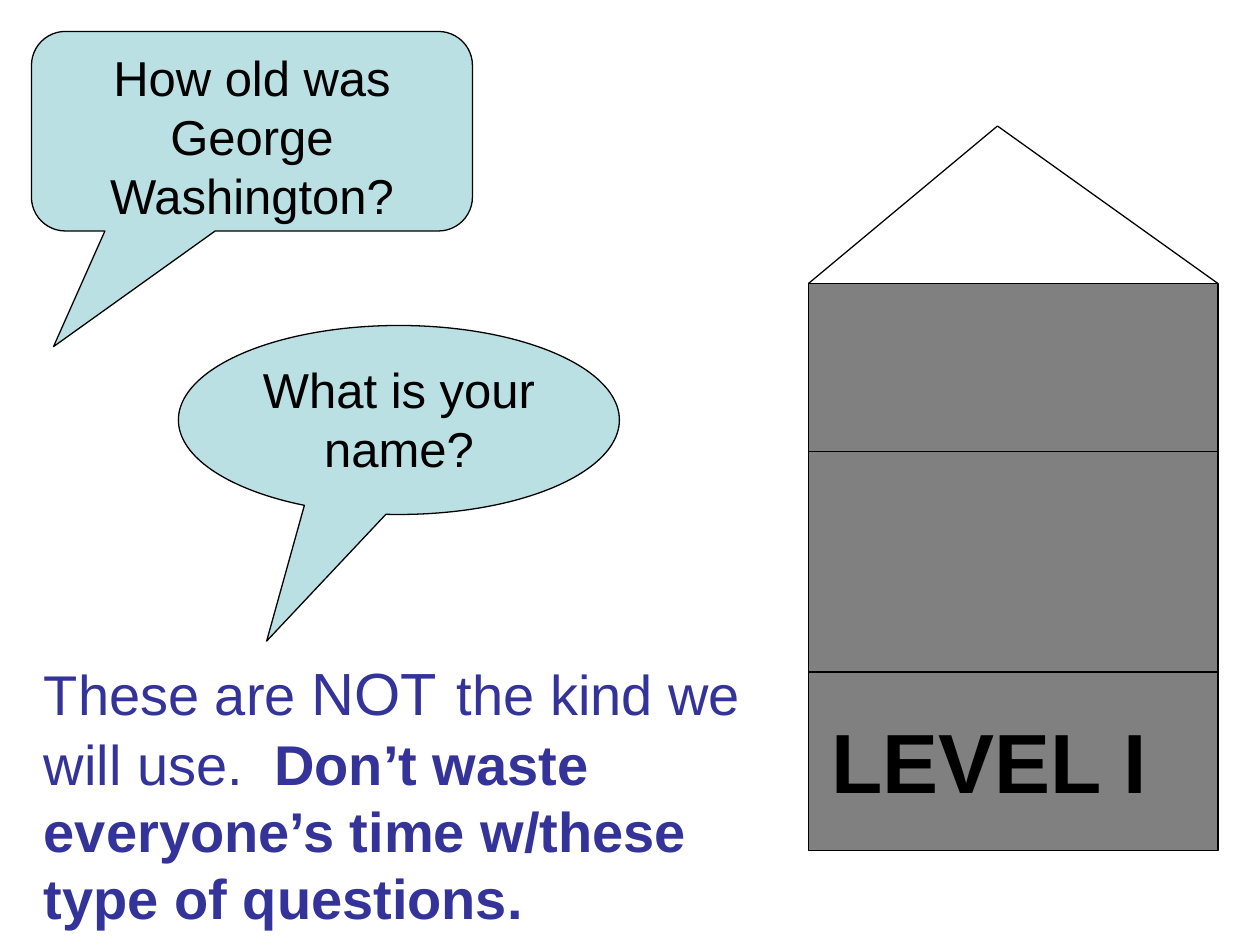
import pptx
import pptx.dml.color
import pptx.enum.shapes
import pptx.enum.text
import pptx.oxml
import pptx.oxml.ns
import pptx.util

COLORS = {"ink": "000000", "tower": "808080", "bubble": "BBE0E3", "note": "333399"}
SHAPES = pptx.enum.shapes.MSO_SHAPE
ALIGN = pptx.enum.text.PP_ALIGN


def color(name):
    return pptx.dml.color.RGBColor.from_string(COLORS[name])


def unit(count):
    """Length of a number of grid steps, twelve to the inch."""
    return pptx.util.Inches(count / 12)


def add_text(para, text, size=28, ink="ink", bold=False):
    span = para.add_run()
    span.text = text
    span.font.name = "Arial"
    span.font.size = pptx.util.Pt(size)
    span.font.bold = bold
    span.font.color.rgb = color(ink)


class Sketch:
    """Draws on one page; every position is in grid steps."""

    line_width = pptx.util.Pt(0.75)

    def __init__(self, page):
        self.page = page

    def outline(self, item):
        item.line.color.rgb = color("ink")
        item.line.width = self.line_width

    def line(self, start, end):
        straight = pptx.enum.shapes.MSO_CONNECTOR.STRAIGHT
        connector = self.page.shapes.add_connector(
            straight, *(unit(step) for step in (*start, *end)))
        self.outline(connector)
        properties = connector._element.spPr
        properties.append(pptx.oxml.parse_xml(
            f"<a:effectLst {pptx.oxml.ns.nsdecls('a')}/>"))

    def shape(self, kind, place, fill):
        shape = self.page.shapes.add_shape(kind, *map(unit, place))
        shape.shadow.inherit = False
        shape.fill.solid()
        shape.fill.fore_color.rgb = color(fill)
        self.outline(shape)
        return shape

    def callout(self, kind, place, adjustments, text):
        shape = self.shape(kind, place, "bubble")
        for index, value in enumerate(adjustments):
            shape.adjustments[index] = value
        frame = shape.text_frame
        frame.word_wrap = True
        frame.vertical_anchor = pptx.enum.text.MSO_ANCHOR.TOP
        para = frame.paragraphs[0]
        para.alignment = ALIGN.CENTER
        add_text(para, text)

    def text(self, place, spans):
        """Add a text box whose paragraph has half a line of space before it."""
        box = self.page.shapes.add_textbox(*map(unit, place))
        frame = box.text_frame
        frame.word_wrap = True
        frame.auto_size = pptx.enum.text.MSO_AUTO_SIZE.SHAPE_TO_FIT_TEXT
        para = frame.paragraphs[0]
        para._p.get_or_add_pPr().append(pptx.oxml.parse_xml(
            f"<a:spcBef {pptx.oxml.ns.nsdecls('a')}>"
            '<a:spcPct val="50000"/></a:spcBef>'))
        for text, style in spans:
            add_text(para, text, **style)


def main():
    deck = pptx.Presentation()
    deck.slide_width = unit(120)
    deck.slide_height = unit(90)
    sketch = Sketch(deck.slides.add_slide(deck.slide_layouts[6]))

    left, top, width, height = tower = (77, 27, 39, 54)
    right = left + width
    sketch.shape(SHAPES.RECTANGLE, tower, "tower")
    for floor in (64, 43):
        sketch.line((left, floor), (right, floor))
    sketch.text((78, 67, 39, 10.8), [("LEVEL I", {"size": 48, "bold": True})])

    peak = (95, 12)
    sketch.line((left, top), peak)
    sketch.line(peak, (right, top))

    note = {"size": 32, "ink": "note"}
    sketch.text((3, 60.84, 73, 28.4), [
        ("These are ", note),
        ("NOT", {**note, "size": 34}),
        (" ", {**note, "size": 40}),
        ("the kind we will use.", note),
        ("  Don’t waste everyone’s time w/these type of questions.",
         {**note, "bold": True}),
    ])

    sketch.callout(SHAPES.ROUNDED_RECTANGULAR_CALLOUT, (3, 3, 42, 19),
                   (-0.45, 1.08, 0.17), "How old was George Washington?")
    sketch.callout(SHAPES.OVAL_CALLOUT, (17, 31, 42, 18),
                   (-0.3, 1.17), "What is your name?")
    deck.save("out.pptx")


if __name__ == "__main__":
    main()
